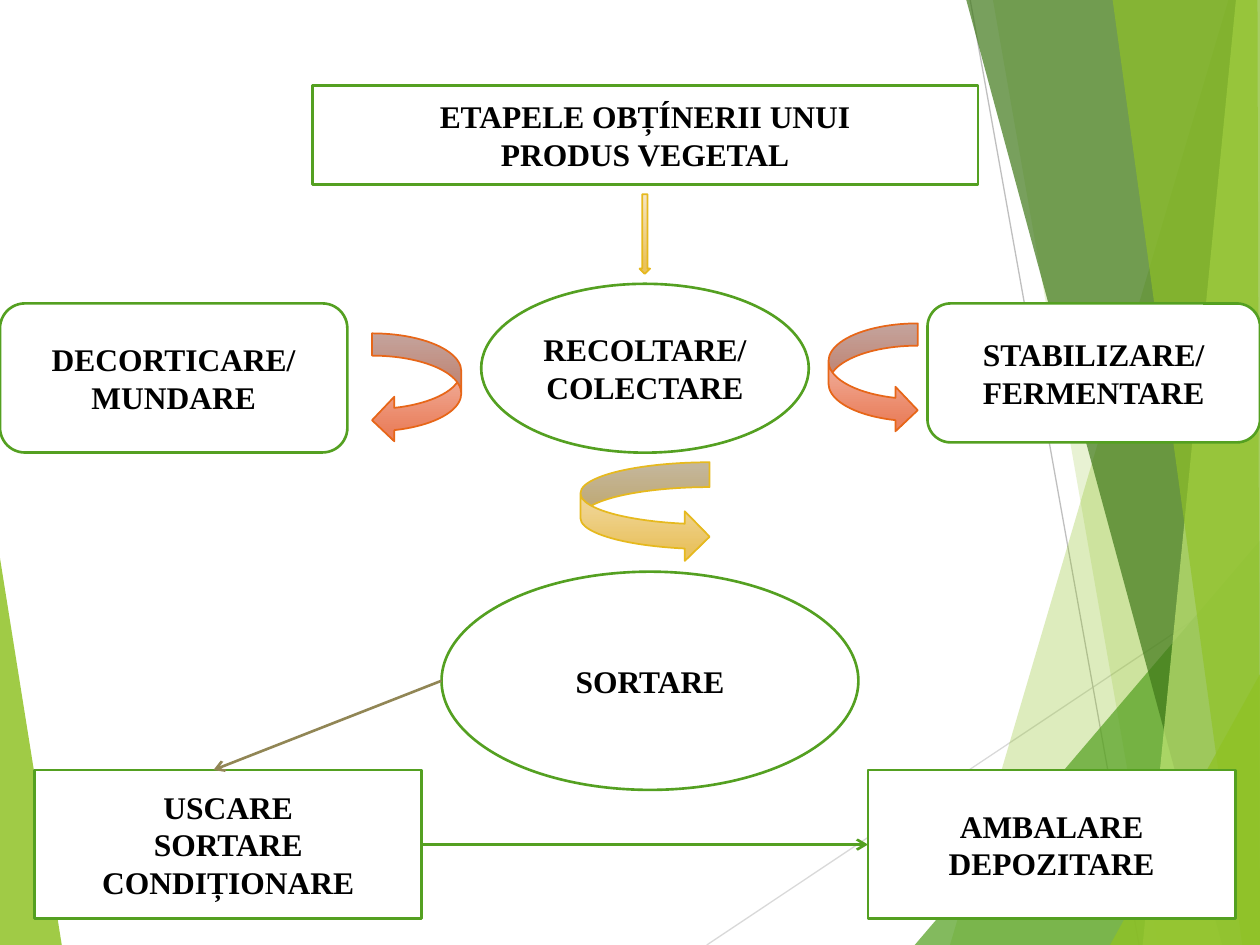
from dataclasses import dataclass

from lxml import etree
from pptx import Presentation
from pptx.dml.color import RGBColor
from pptx.enum import shapes, text
from pptx.oxml import ns
from pptx.util import Pt

WHITE = RGBColor(0xFF, 0xFF, 0xFF)
BLACK = RGBColor(0, 0, 0)
GREEN = RGBColor(0x54, 0xA0, 0x21)
LIME = RGBColor(0x90, 0xC2, 0x26)
DARK_GREEN = RGBColor(0x3F, 0x78, 0x19)
PALE_LIME = RGBColor(0xC0, 0xE4, 0x74)
LIGHT_GREY = RGBColor(0xD9, 0xD9, 0xD9)
GREY = RGBColor(0xBF, 0xBF, 0xBF)
OLIVE = RGBColor(0x91, 0x86, 0x55)
GOLD = (RGBColor(0xF5, 0xE5, 0xC5), RGBColor(0xE9, 0xC2, 0x60), RGBColor(0xE6, 0xB9, 0x1E))
ORANGE = (RGBColor(0xF5, 0xCE, 0xC5), RGBColor(0xEA, 0x81, 0x5F), RGBColor(0xE7, 0x66, 0x18))

W, H = 720, 540
Kind = shapes.MSO_SHAPE


@dataclass
class Facet:
    points: list[tuple[float, float]]
    color: RGBColor
    opacity: int


@dataclass
class Line:
    start: tuple[float, float]
    end: tuple[float, float]
    color: RGBColor
    width: float
    arrow: bool = False


@dataclass
class Step:
    kind: Kind
    box: tuple[float, float, float, float]
    label: str


@dataclass
class BlockArrow:
    kind: Kind
    box: tuple[float, float, float, float]
    colors: tuple[RGBColor, RGBColor, RGBColor]


LEFT_FACET = Facet([(0, 319), (35.3, H), (0, H)], LIME, 85)
BACK_LINES = [
    Line((403.9, H), (W, 329), LIGHT_GREY, 0.75),
    Line((554.4, 0), (650.9, H), GREY, 0.75),
]
RIGHT_FACETS = [
    Facet([(702, 0), (542.9, H), (W, H), (W, 0)], LIME, 30),
    Facet([(567.4, 0), (661.7, H), (W, H), (W, 0)], LIME, 20),
    Facet([(522.7, H), (W, 308.9), (W, H)], GREEN, 72),
    Facet([(552.2, 0), (698.4, H), (W, H), (W, 0)], DARK_GREEN, 70),
    Facet([(706.3, 0), (653, H), (W, H), (W, 0)], PALE_LIME, 70),
    Facet([(635.8, 0), (709.9, H), (W, H), (718.6, 0)], LIME, 65),
    Facet([(634.3, H), (W, 385.2), (W, H)], LIME, 80),
]
TITLE = "ETAPELE OBȚÍNERII UNUI\nPRODUS VEGETAL"
TITLE_BOX = (178.5, 48.8, 380.3, 56.7)
STEPS = [
    Step(Kind.OVAL, (275, 162.2, 187.2, 96.5), "RECOLTARE/COLECTARE"),
    Step(Kind.ROUNDED_RECTANGLE, (0, 173.4, 198.5, 85.2), "DECORTICARE/\nMUNDARE"),
    Step(Kind.ROUNDED_RECTANGLE, (530, 173.4, 190, 79.4), "STABILIZARE/\nFERMENTARE"),
    Step(Kind.OVAL, (252.3, 326.7, 238.2, 124.7), "SORTARE"),
    Step(Kind.RECTANGLE, (19.8, 440, 221.2, 85.1), "USCARE\nSORTARE\nCONDIȚIONARE"),
    Step(Kind.RECTANGLE, (496, 440, 210, 85.1), "AMBALARE\nDEPOZITARE"),
]
BLOCK_ARROWS = [
    BlockArrow(Kind.DOWN_ARROW, (365.5, 111, 6, 45.5), GOLD),
    BlockArrow(Kind.CURVED_LEFT_ARROW, (212.6, 190.5, 51, 62.4), ORANGE),
    BlockArrow(Kind.CURVED_RIGHT_ARROW, (473.4, 184.8, 51, 62.4), ORANGE),
    BlockArrow(Kind.CURVED_RIGHT_ARROW, (331.7, 264.2, 73.8, 56.7), GOLD),
]
FLOW_LINES = [
    Line((252.3, 389), (122, 440), OLIVE, 1.5, arrow=True),
    Line((241, 482.6), (496, 482.6), GREEN, 1.5, arrow=True),
]


def add_facet(s, facet: Facet) -> None:
    points = [(Pt(x), Pt(y)) for x, y in facet.points]
    builder = s.shapes.build_freeform(*points[0])
    builder.add_line_segments(points[1:], close=True)
    sp = builder.convert_to_shape()
    sp.shadow.inherit = False
    sp.fill.solid()
    sp.fill.fore_color.rgb = facet.color
    sp.line.fill.background()
    color = sp.fill._xPr.find(".//" + ns.qn("a:srgbClr"))
    etree.SubElement(color, ns.qn("a:alpha"), val=str(facet.opacity * 1000))


def add_line(s, line: Line) -> None:
    ends = [Pt(v) for v in (*line.start, *line.end)]
    sp = s.shapes.add_connector(shapes.MSO_CONNECTOR.STRAIGHT, *ends)
    sp.line.color.rgb = line.color
    sp.line.width = Pt(line.width)
    if line.arrow:
        etree.SubElement(sp.line._get_or_add_ln(), ns.qn("a:tailEnd"), type="arrow")
    etree.SubElement(sp._element.spPr, ns.qn("a:effectLst"))


def write_text(sp, label: str, *, size=18, font="Times New Roman", color=BLACK, bold=True) -> None:
    tf = sp.text_frame
    tf.text = label
    tf.word_wrap = True
    tf.auto_size = text.MSO_AUTO_SIZE.NONE
    tf.vertical_anchor = text.MSO_ANCHOR.MIDDLE
    for p in tf.paragraphs:
        p.alignment = text.PP_ALIGN.CENTER
        for r in p.runs:
            r.font.size = Pt(size)
            r.font.name = font
            r.font.bold = bold
            r.font.color.rgb = color


def format_box(sp, label: str) -> None:
    sp.fill.solid()
    sp.fill.fore_color.rgb = WHITE
    sp.line.color.rgb = GREEN
    sp.line.width = Pt(1.5)
    write_text(sp, label)


def add_title(s) -> None:
    sp = s.shapes.title
    sp.left, sp.top, sp.width, sp.height = [Pt(v) for v in TITLE_BOX]
    format_box(sp, TITLE)


def add_step(s, step: Step) -> None:
    sp = s.shapes.add_shape(step.kind, *[Pt(v) for v in step.box])
    sp.shadow.inherit = False
    format_box(sp, step.label)


def add_block_arrow(s, arrow: BlockArrow) -> None:
    light, deep, outline = arrow.colors
    sp = s.shapes.add_shape(arrow.kind, *[Pt(v) for v in arrow.box])
    sp.shadow.inherit = False
    sp.fill.gradient()
    sp.fill.gradient_angle = 270
    for stop, color, position in zip(sp.fill.gradient_stops, (light, deep), (0, 0.88)):
        stop.color.rgb = color
        stop.position = position
    sp.line.color.rgb = outline
    sp.line.width = Pt(1)


def main() -> None:
    prs = Presentation()
    prs.slide_width, prs.slide_height = Pt(W), Pt(H)
    s = prs.slides.add_slide(prs.slide_layouts[5])
    add_facet(s, LEFT_FACET)
    for line in BACK_LINES:
        add_line(s, line)
    for facet in RIGHT_FACETS:
        add_facet(s, facet)
    add_title(s)
    for step in STEPS:
        add_step(s, step)
    for arrow in BLOCK_ARROWS:
        add_block_arrow(s, arrow)
    for line in FLOW_LINES:
        add_line(s, line)
    prs.save("out.pptx")


if __name__ == "__main__":
    main()
